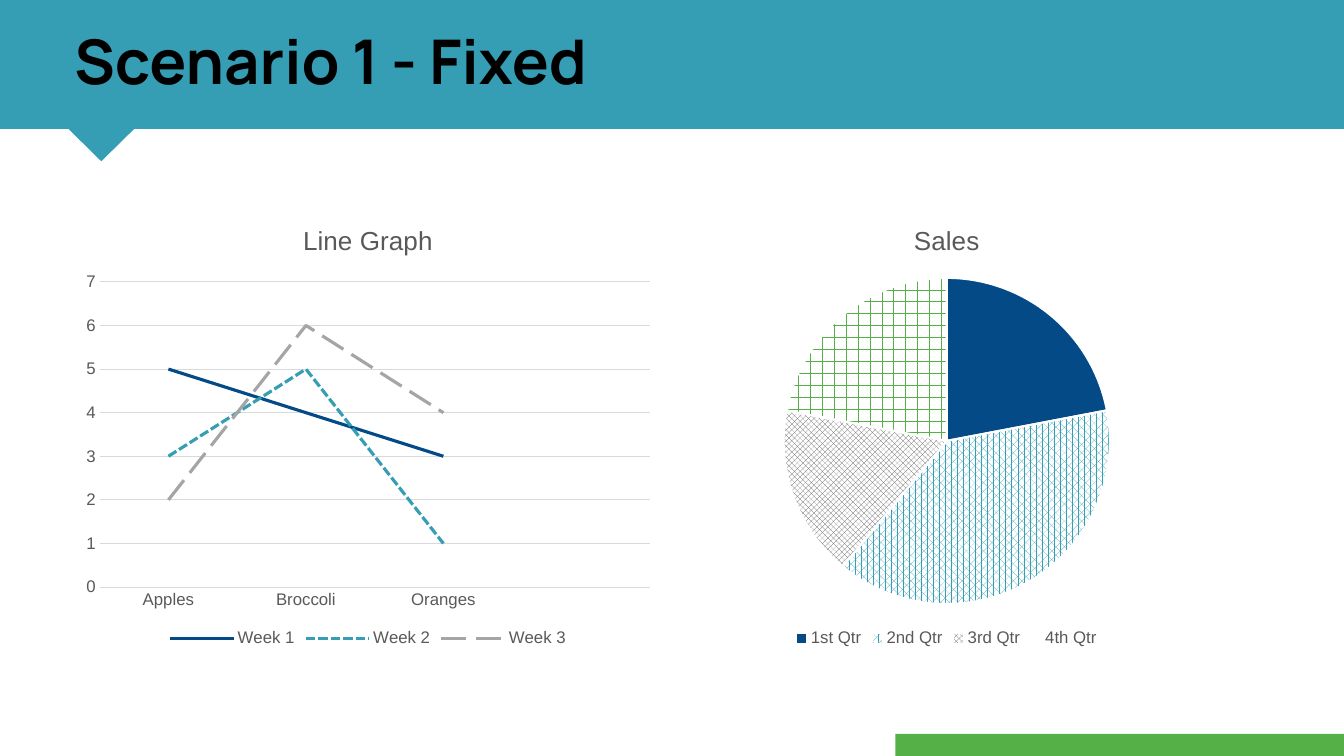
from dataclasses import dataclass

from pptx import Presentation
from pptx.chart.data import CategoryChartData
from pptx.dml.color import RGBColor
from pptx.enum.chart import XL_CHART_TYPE, XL_LEGEND_POSITION, XL_TICK_MARK
from pptx.enum.dml import MSO_LINE, MSO_PATTERN
from pptx.enum.shapes import MSO_SHAPE
from pptx.enum.text import MSO_ANCHOR
from pptx.util import Inches, Pt


@dataclass(frozen=True)
class Theme:
    teal: str = "359EB5"
    green: str = "55B047"
    navy: str = "034A87"
    grey: str = "A5A5A5"
    text_grey: str = "595959"
    grid: str = "D9D9D9"
    black: str = "000000"
    white: str = "FFFFFF"
    heading_font: str = "Manrope"
    chart_font: str = "Arial"
    heading_size: float = 44
    chart_title_size: float = 18.6
    label_size: float = 12


THEME = Theme()


def color(value):
    return RGBColor.from_string(value)


def style_font(font, name, size, font_color, bold=False):
    font.name = name
    font.size = Pt(size)
    font.bold = bold
    font.color.rgb = color(font_color)


def add_block(slide, kind, left, top, width, height, fill):
    shape = slide.shapes.add_shape(
        kind, Inches(left), Inches(top), Inches(width), Inches(height))
    shape.shadow.inherit = False
    shape.fill.solid()
    shape.fill.fore_color.rgb = color(fill)
    shape.line.fill.background()


def add_text(slide, text, left, top, width, height, *, font, size, font_color, bold):
    box = slide.shapes.add_textbox(
        Inches(left), Inches(top), Inches(width), Inches(height))
    frame = box.text_frame
    frame.word_wrap = True
    frame.vertical_anchor = MSO_ANCHOR.MIDDLE
    paragraph = frame.paragraphs[0]
    paragraph.line_spacing = 0.9
    run = paragraph.add_run()
    run.text = text
    style_font(run.font, font, size, font_color, bold)


def add_chart(slide, kind, title, categories, series, left, top, width, height):
    """Add a chart with a title and a legend at the bottom."""
    data = CategoryChartData()
    data.categories = categories
    for name, values in series:
        data.add_series(name, values)
    chart = slide.shapes.add_chart(
        kind, Inches(left), Inches(top), Inches(width), Inches(height), data).chart

    chart.has_title = True
    paragraph = chart.chart_title.text_frame.paragraphs[0]
    run = paragraph.add_run()
    run.text = title
    style_font(run.font, THEME.chart_font, THEME.chart_title_size, THEME.text_grey)
    chart.chart_title.include_in_layout = False

    chart.has_legend = True
    chart.legend.position = XL_LEGEND_POSITION.BOTTOM
    chart.legend.include_in_layout = False
    style_font(chart.legend.font, THEME.chart_font, THEME.label_size, THEME.text_grey)
    return chart


def style_line(line, line_color, width):
    line.color.rgb = color(line_color)
    line.width = Pt(width)


def add_line_graph(slide):
    weeks = [
        ("Week 1", (5, 4, 3, None), THEME.navy, None),
        ("Week 2", (3, 5, 1, None), THEME.teal, MSO_LINE.SQUARE_DOT),
        ("Week 3", (2, 6, 4, None), THEME.grey, MSO_LINE.LONG_DASH),
    ]
    # The fourth category is empty and leaves room at the right
    chart = add_chart(
        slide, XL_CHART_TYPE.LINE, "Line Graph",
        ["Apples", "Broccoli", "Oranges", ""],
        [(name, values) for name, values, _, _ in weeks],
        0.74, 2.03, 5.82, 4.43)

    for series, (_, _, line_color, dash) in zip(chart.plots[0].series, weeks):
        series.smooth = False
        style_line(series.format.line, line_color, 2.25)
        if dash:
            series.format.line.dash_style = dash

    for axis in (chart.category_axis, chart.value_axis):
        axis.major_tick_mark = XL_TICK_MARK.NONE
        axis.minor_tick_mark = XL_TICK_MARK.NONE
        style_font(axis.tick_labels.font, THEME.chart_font,
                   THEME.label_size, THEME.text_grey)
    style_line(chart.category_axis.format.line, THEME.grid, 0.75)

    value_axis = chart.value_axis
    value_axis.minimum_scale, value_axis.maximum_scale = 0, 7
    value_axis.major_unit = 1
    value_axis.format.line.fill.background()
    style_line(value_axis.major_gridlines.format.line, THEME.grid, 0.75)


def add_sales_pie(slide):
    quarters = [
        ("1st Qtr", 22, THEME.navy, None),
        ("2nd Qtr", 39, THEME.teal, MSO_PATTERN.PERCENT_60),
        ("3rd Qtr", 17, THEME.text_grey, MSO_PATTERN.SOLID_DIAMOND),
        ("4th Qtr", 22, THEME.green, MSO_PATTERN.HORIZONTAL_BRICK),
    ]
    chart = add_chart(
        slide, XL_CHART_TYPE.PIE, "Sales",
        [quarter[0] for quarter in quarters],
        [("Sales", [quarter[1] for quarter in quarters])],
        6.67, 2.03, 5.44, 4.43)
    plot = chart.plots[0]
    plot.vary_by_categories = True

    for index, (_, _, fill_color, pattern) in enumerate(quarters):
        slice_format = plot.series[0].points[index].format
        fill = slice_format.fill
        if pattern:
            fill.patterned()
            fill.pattern = pattern
            fill.back_color.rgb = color(THEME.white)
        else:
            fill.solid()
        fill.fore_color.rgb = color(fill_color)
        style_line(slice_format.line, THEME.white, 1.5)


def main():
    presentation = Presentation()
    presentation.slide_width = Inches(13.33)
    presentation.slide_height = Inches(7.5)
    slide = presentation.slides.add_slide(presentation.slide_layouts[6])

    # Header band with its pointer, and the footer bar
    add_block(slide, MSO_SHAPE.FLOWCHART_DECISION, 0.66, 0.92, 0.69, 0.68, THEME.teal)
    add_block(slide, MSO_SHAPE.RECTANGLE, 0, 0, 13.33, 1.28, THEME.teal)
    add_block(slide, MSO_SHAPE.RECTANGLE, 8.88, 7.28, 4.45, 0.22, THEME.green)

    # Title
    add_text(slide, "Scenario 1 - Fixed", 0.64, 0, 11.87, 1.28,
             font=THEME.heading_font, size=THEME.heading_size,
             font_color=THEME.black, bold=True)

    # Charts
    add_line_graph(slide)
    add_sales_pie(slide)

    presentation.save("out.pptx")


if __name__ == "__main__":
    main()
